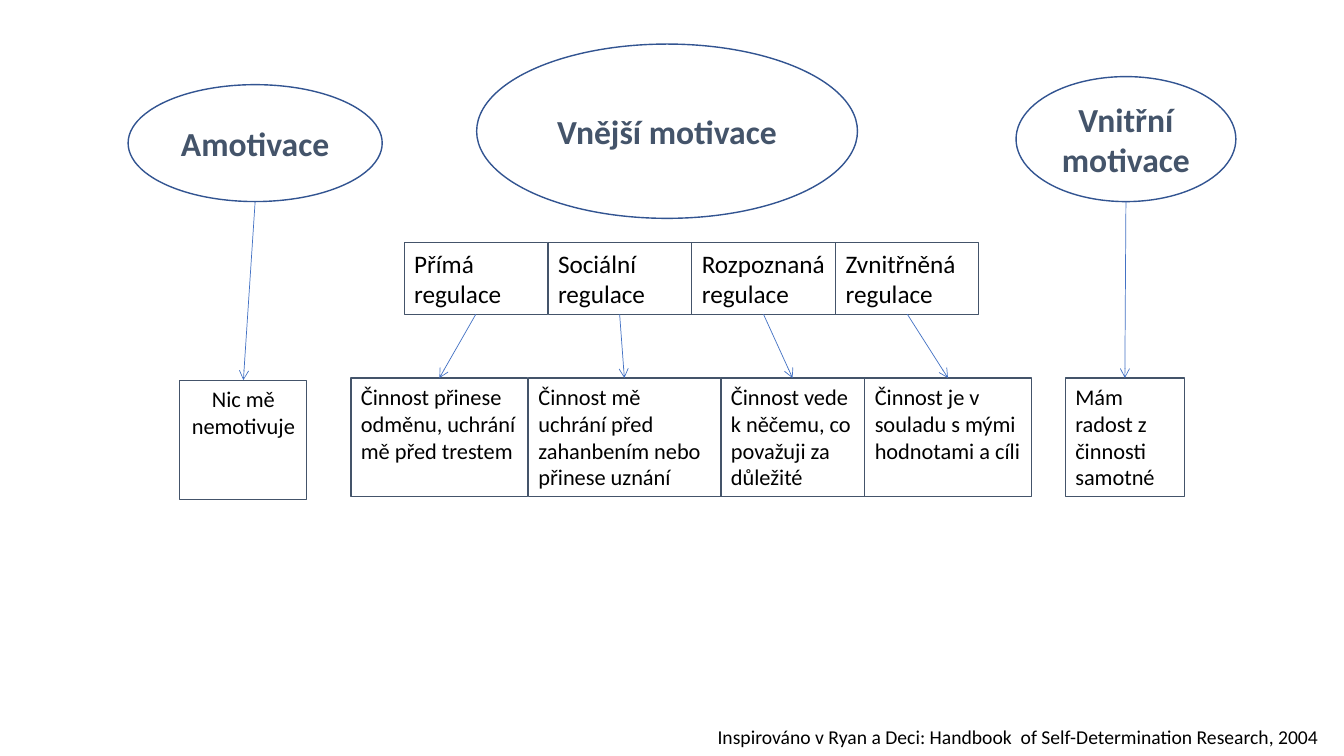
from dataclasses import dataclass

from lxml.etree import SubElement
from pptx import Presentation
from pptx.dml.color import RGBColor as Rgb
from pptx.enum.shapes import MSO_CONNECTOR as Link, MSO_SHAPE as Kind
from pptx.enum.text import MSO_ANCHOR as Anchor, PP_ALIGN as Align
from pptx.oxml.ns import qn
from pptx.util import Pt


@dataclass(frozen=True)
class Theme:
    face: str = "Calibri"
    ink: str = "000000"
    slate: str = "44546A"
    rim: str = "325491"
    arrow: str = "4472C4"
    title: float = 24
    label: float = 18
    body: float = 16
    note: float = 14


class Board:
    def __init__(self, slide, theme):
        self.slide, self.theme = slide, theme

    def letter(self, shape, paras, size, color, bold=False, align=Align.LEFT, **frame):
        """Fill a shape with paragraphs; frame holds text frame settings."""
        text = shape.text_frame
        for key, value in ({"word_wrap": True, "vertical_anchor": Anchor.TOP} | frame).items():
            setattr(text, key, value)
        text.text = "\n".join(paras)
        style = {"name": self.theme.face, "size": Pt(size), "bold": bold}
        for para in text.paragraphs:
            para.alignment = align
            for key, value in style.items():
                setattr(para.font, key, value)
            para.font.color.rgb = Rgb.from_string(color)

    def outline(self, kind, place, color, width):
        shape = self.slide.shapes.add_shape(kind, *map(Pt, place))
        shape.shadow.inherit = False
        shape.fill.background()
        shape.line.color.rgb = Rgb.from_string(color)
        shape.line.width = Pt(width)
        return shape

    def oval(self, place, name):
        shape = self.outline(Kind.OVAL, place, self.theme.rim, 1)
        self.letter(shape, [name], self.theme.title, self.theme.slate, bold=True,
                    align=Align.CENTER, vertical_anchor=Anchor.MIDDLE)
        return shape

    def box(self, place, paras, size, **style):
        shape = self.outline(Kind.RECTANGLE, place, self.theme.slate, 0.75)
        self.letter(shape, paras, size, self.theme.ink, **style)
        return shape

    def arrow(self, start, end, glue=True):
        """Point from the bottom of start to the top of end; glue joins the start."""
        link = self.slide.shapes.add_connector(
            Link.STRAIGHT, start.left + start.width // 2, start.top + start.height,
            end.left + end.width // 2, end.top)
        if glue:
            link.begin_connect(start, 2)
        link.end_connect(end, 0)
        link.line.color.rgb = Rgb.from_string(self.theme.arrow)
        link.line.width = Pt(0.5)
        props = link.element.spPr
        SubElement(props.find(qn("a:ln")), qn("a:tailEnd"), type="arrow")
        SubElement(props, qn("a:effectLst"))

    def note(self, place, words):
        shape = self.slide.shapes.add_textbox(*map(Pt, place))
        self.letter(shape, [words], self.theme.note, self.theme.ink, word_wrap=False)


LEVELS = [
    ("Přímá", 126.25, "Činnost přinese odměnu, uchrání mě před trestem"),
    ("Sociální", 137, "Činnost mě uchrání před zahanbením nebo přinese uznání"),
    ("Rozpoznaná", 102.25, "Činnost vede k něčemu, co považuji za důležité"),
    ("Zvnitřněná", 118.75, "Činnost je v souladu s mými hodnotami a cíli"),
]
GAP = 0.5
LEVEL_LEFT, LEVEL_TOP, LEVEL_WIDE, LEVEL_HIGH = 288.75, 173.5, 102.25, 51
EFFECT_LEFT, EFFECT_TOP, EFFECT_HIGH = 250.75, 270, 85


def main():
    deck = Presentation()
    deck.slide_width, deck.slide_height = Pt(960), Pt(540)
    theme = Theme()
    board = Board(deck.slides.add_slide(deck.slide_layouts[6]), theme)

    none = board.oval((91.5, 60.5, 181.5, 83.5), "Amotivace")
    board.oval((340.5, 31.5, 272, 124.5), "Vnější motivace")
    inner = board.oval((725.75, 54.75, 157, 89.25), "Vnitřní motivace")

    left = EFFECT_LEFT
    for i, (name, wide, effect) in enumerate(LEVELS):
        place = (LEVEL_LEFT + i * (LEVEL_WIDE + GAP), LEVEL_TOP, LEVEL_WIDE, LEVEL_HIGH)
        level = board.box(place, [name, "regulace"], theme.label,
                          word_wrap=name != "Rozpoznaná")
        result = board.box((left, EFFECT_TOP, wide, EFFECT_HIGH), [effect], theme.body)
        board.arrow(level, result)
        left += wide + GAP

    idle = board.box((128.5, EFFECT_TOP + 1.5, 90.75, EFFECT_HIGH),
                     ["Nic mě nemotivuje"], theme.body, align=Align.CENTER)
    joy = board.box((761, EFFECT_TOP, 85, EFFECT_HIGH),
                    ["Mám radost z činnosti", "samotné"], theme.body)
    board.arrow(none, idle, glue=False)
    board.arrow(inner, joy, glue=False)

    board.note((505.5, 514, 454, 24.5),
               "Inspirováno v Ryan a Deci: Handbook  of Self-Determination Research, 2004")
    deck.save("out.pptx")


if __name__ == "__main__":
    main()
